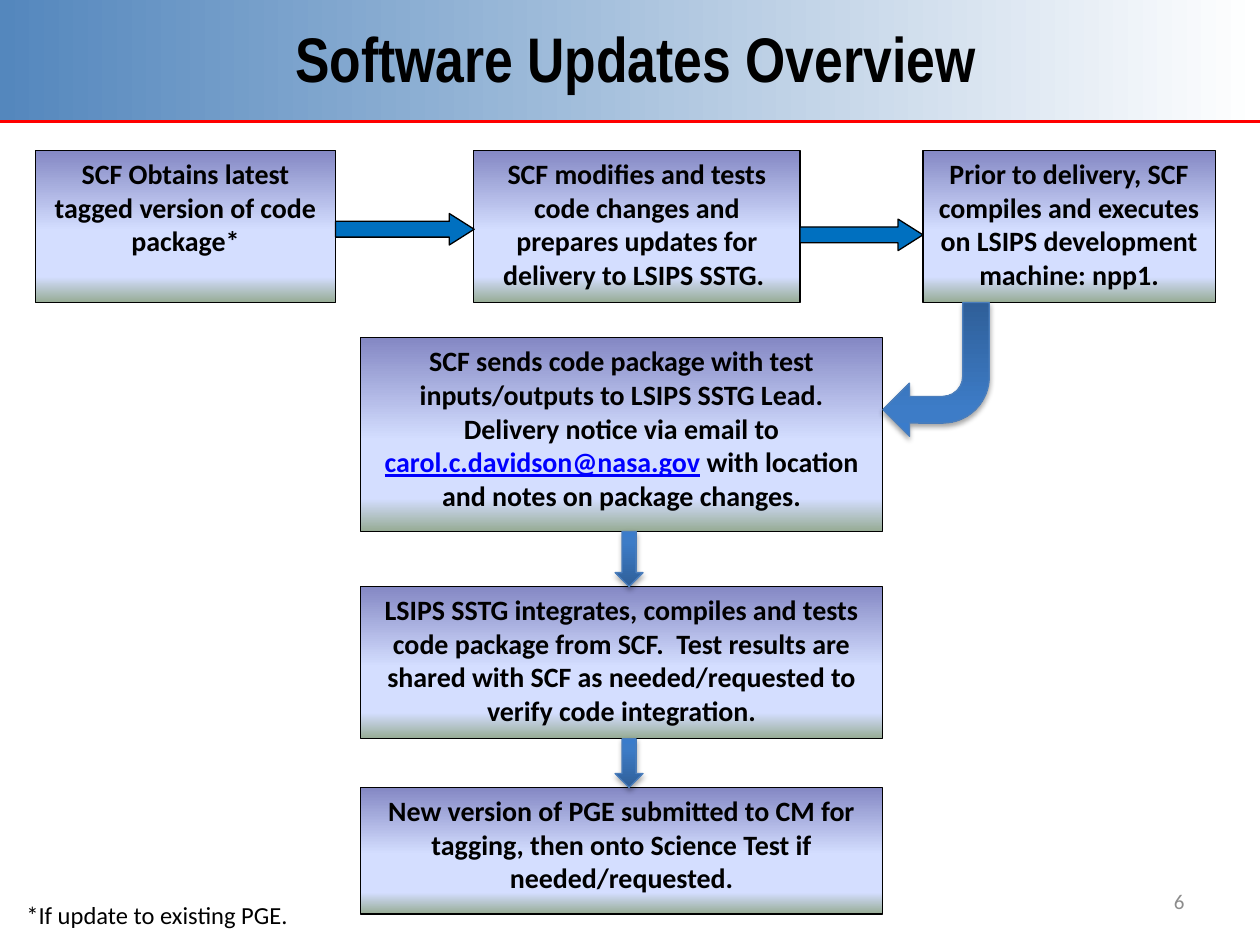
from lxml import etree
from pptx import Presentation
from pptx.dml.color import RGBColor
from pptx.enum import shapes, text
from pptx.oxml import parse_xml
from pptx.oxml.ns import qn
from pptx.util import Pt

BLACK = RGBColor(0, 0, 0)
WHITE = RGBColor(255, 255, 255)
RED = RGBColor(255, 0, 0)
GREY = RGBColor(0x8C, 0x8C, 0x8C)
LINK = RGBColor(0, 0, 255)
SKY = RGBColor(0x54, 0x87, 0xBD)
BLUE = RGBColor(0x00, 0x70, 0xC0)
EDGE = RGBColor(0x4B, 0x7E, 0xBC)
PALE = RGBColor(0xD4, 0xDE, 0xFF)
BOX = [(0, RGBColor(0x84, 0x88, 0xC4)), (53, PALE), (83, PALE),
       (100, RGBColor(0x96, 0xAB, 0x94))]
STEEL = [(0, RGBColor(0x2F, 0x5F, 0x99)), (80, RGBColor(0x3D, 0x7C, 0xC7)),
         (100, RGBColor(0x3A, 0x7C, 0xCB))]
SHADE = ('<a:effectLst xmlns:a="http://schemas.openxmlformats.org/drawingml/2006/main">'
         '<a:outerShdw blurRad="39400" dist="22900" dir="5400000" rotWithShape="0">'
         '<a:srgbClr val="000000"><a:alpha val="35000"/></a:srgbClr>'
         '</a:outerShdw></a:effectLst>')
KIND = shapes.MSO_SHAPE
ALIGN = text.PP_ALIGN

prs = Presentation()
prs.slide_width, prs.slide_height = Pt(720), Pt(540)
slide = prs.slides.add_slide(prs.slide_layouts[5])


def draw(kind, at, fill, line=None, angle=0):
    """Add a shape with a plain colour or a list of gradient stops."""
    shape = slide.shapes.add_shape(kind, *map(Pt, at))
    shape.shadow.inherit = False
    if isinstance(fill, list):
        shape.fill.gradient()
        shape.fill.gradient_angle = angle
        stops = shape._element.spPr.find(".//" + qn("a:gsLst"))
        for old in list(stops):
            stops.remove(old)
        for pos, color in fill:
            stop = etree.SubElement(stops, qn("a:gs"), pos=str(pos * 1000))
            etree.SubElement(stop, qn("a:srgbClr"), val=str(color))
    else:
        shape.fill.solid()
        shape.fill.fore_color.rgb = fill
    if line is None:
        shape.line.fill.background()
    else:
        shape.line.color.rgb = line
        shape.line.width = Pt(0.75)
    return shape


def style(par, size, color=BLACK, bold=False, align=ALIGN.LEFT, name="Calibri"):
    par.alignment = align
    font = par.font
    font.name, font.size, font.bold = name, Pt(size), bold
    font.color.rgb = color


# Header band, behind the title
band = draw(KIND.RECTANGLE, (0, 0, 720, 69.5), [(0, SKY), (100, WHITE)])
slide.shapes._spTree.insert(2, band._element)
rule = slide.shapes.add_connector(shapes.MSO_CONNECTOR.STRAIGHT,
                                  0, Pt(69.5), Pt(720), Pt(69.5))
rule.line.color.rgb = RED
rule.line.width = Pt(1.25)
etree.SubElement(rule._element.spPr, qn("a:effectLst"))

# Title
title = slide.shapes.title
title.left, title.top, title.width, title.height = map(Pt, (63, 0, 600.5, 65))
title.text_frame.text = "Software Updates Overview"
title.text_frame.vertical_anchor = text.MSO_ANCHOR.MIDDLE
style(title.text_frame.paragraphs[0], 36, BLACK, True, ALIGN.CENTER, "Arial Narrow")

# Process steps: place and runs of text, the link as second run
steps = [
    ((20.2, 85.9, 171.6, 87), ["SCF Obtains latest tagged version of code package*"]),
    ((270.7, 85.9, 186.5, 87), ["SCF modifies and tests code changes and prepares "
                                "updates for delivery to LSIPS SSTG. "]),
    ((527.4, 85.9, 167, 87), ["Prior to delivery, SCF compiles and executes on "
                              "LSIPS development machine: npp1."]),
    ((206.2, 193, 298, 110.7), ["SCF sends code package with test inputs/outputs to LSIPS "
                                "SSTG Lead. Delivery notice via email to ",
                                "carol.c.davidson@nasa.gov",
                                " with location and notes on package changes."]),
    ((206.2, 335.2, 298, 87), ["LSIPS SSTG integrates, compiles and tests code package "
                               "from SCF.  Test results are shared with SCF as "
                               "needed/requested to verify code integration."]),
    ((206.2, 450, 298, 72.4), ["New version of PGE submitted to CM for tagging, then "
                               "onto Science Test if needed/requested."]),
]
for at, words in steps:
    frame = draw(KIND.RECTANGLE, at, BOX, BLACK, 270).text_frame
    frame.word_wrap = True
    frame.vertical_anchor = text.MSO_ANCHOR.TOP
    par = frame.paragraphs[0]
    style(par, 16, BLACK, True, ALIGN.CENTER)
    for i, word in enumerate(words):
        run = par.add_run()
        run.text = word
        if i == 1:
            run.font.color.rgb = LINK
            run.font.underline = True

# Arrows across the top row
for at in ((191.8, 122, 79.2, 18), (457.2, 125.2, 70.2, 18)):
    arrow = draw(KIND.RIGHT_ARROW, at, BLUE, BLACK)
    arrow.adjustments[1] = 0.79

# Shaded arrows down the page
for kind, at, turn in (
        (KIND.BENT_ARROW, (504.5, 172.9, 60.8, 76.4), 180),
        (KIND.DOWN_ARROW, (351.5, 303.7, 16, 31.5), 0),
        (KIND.DOWN_ARROW, (351.5, 422.2, 16, 27.8), 0)):
    arrow = draw(kind, at, STEEL, EDGE, 90)
    arrow.rotation = turn
    props = arrow._element.spPr
    props.replace(props.find(qn("a:effectLst")), parse_xml(SHADE))

# Footnote and page number
for at, words, size, color, align in (
        ((8, 510.5, 227, 24.2), "*If update to existing PGE.", 14, BLACK, ALIGN.LEFT),
        ((516, 500.5, 168, 28.8), "6", 12, GREY, ALIGN.RIGHT)):
    frame = slide.shapes.add_textbox(*map(Pt, at)).text_frame
    frame.word_wrap = True
    frame.vertical_anchor = text.MSO_ANCHOR.MIDDLE
    frame.text = words
    style(frame.paragraphs[0], size, color, False, align)

prs.save("out.pptx")
